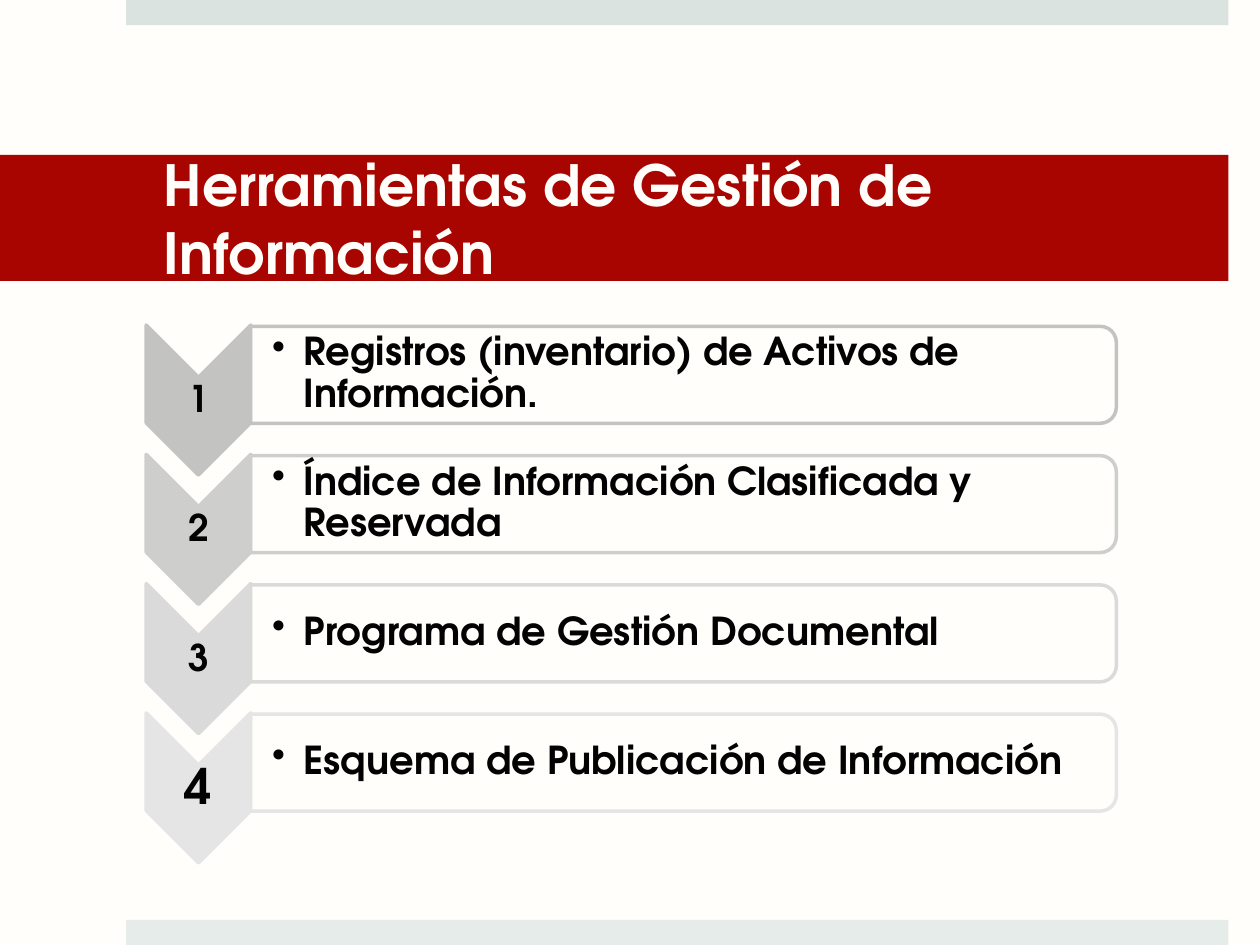
import dataclasses

import pptx
import pptx.dml.color
import pptx.enum.shapes
import pptx.enum.text
import pptx.oxml.ns
import pptx.util
from lxml import etree

RGBColor = pptx.dml.color.RGBColor
MSO_SHAPE = pptx.enum.shapes.MSO_SHAPE
PP_ALIGN = pptx.enum.text.PP_ALIGN

PAPER = RGBColor(0xFF, 0xFE, 0xFB)
INK = RGBColor(0x02, 0x02, 0x02)
RED = RGBColor(0xA9, 0x05, 0x00)
TOP_BAND = RGBColor(0xDA, 0xE3, 0xDF)
BOTTOM_BAND = RGBColor(0xE6, 0xEC, 0xEA)
FONT = "TeX Gyre Adventor"

SLIDE_WIDTH = pptx.util.Inches(10)
SLIDE_HEIGHT = pptx.util.Inches(7.5)
COLUMN = SLIDE_WIDTH / 100
ROW = SLIDE_HEIGHT / 75
STEP_PITCH = 10.26


@dataclasses.dataclass(frozen=True)
class Area:
    left: float
    top: float
    width: float
    height: float

    def down(self, rows: float) -> "Area":
        return dataclasses.replace(self, top=self.top + rows)

    def lengths(self) -> tuple[int, int, int, int]:
        return (round(self.left * COLUMN), round(self.top * ROW),
                round(self.width * COLUMN), round(self.height * ROW))


@dataclasses.dataclass(frozen=True)
class Step:
    number: str
    text: str
    color: RGBColor
    number_size: int = 21


TITLE = Area(0, 12.3, 97.5, 10)
CHEVRON = Area(9.8, 27.6, 11.9, 8.3)
NUMBER = Area(11.6, 30, 8.3, 3.6)
PANEL = Area(50.4, -4.6, 7.7, 68.7)
ITEM = Area(19.9, 26.2, 68.3, 7)

STEPS = [
    Step("1", "Registros (inventario) de Activos de Información.", RGBColor(0xC3, 0xC4, 0xC2)),
    Step("2", "Índice de Información Clasificada y Reservada", RGBColor(0xCE, 0xCF, 0xCD)),
    Step("3", "Programa de Gestión Documental", RGBColor(0xD9, 0xDA, 0xD9)),
    Step("4", "Esquema de Publicación de Información", RGBColor(0xE4, 0xE5, 0xE4), 28),
]


def place(shape, area: Area) -> None:
    shape.left, shape.top, shape.width, shape.height = area.lengths()


def add_filled(slide, kind, area: Area, fill: RGBColor, line: RGBColor | None = None,
               rotation: float = 0):
    shape = slide.shapes.add_shape(kind, *area.lengths())
    shape.shadow.inherit = False
    shape.rotation = rotation
    shape.fill.solid()
    shape.fill.fore_color.rgb = fill
    if line is None:
        shape.line.fill.background()
    else:
        shape.line.color.rgb = line
        shape.line.width = pptx.util.Pt(2)
    return shape


def set_transparency(shape, opacity: int) -> None:
    color = shape.fill._xPr.find(".//" + pptx.oxml.ns.qn("a:srgbClr"))
    etree.SubElement(color, pptx.oxml.ns.qn("a:alpha"), val=str(opacity * 1000))


def set_margins(frame, left: float, top: float, right: float, bottom: float) -> None:
    frame.margin_left, frame.margin_right = round(left * COLUMN), round(right * COLUMN)
    frame.margin_top, frame.margin_bottom = round(top * ROW), round(bottom * ROW)


def format_runs(paragraph, size: float, color: RGBColor) -> None:
    for run in paragraph.runs:
        run.font.name = FONT
        run.font.size = pptx.util.Pt(size)
        run.font.bold = True
        run.font.color.rgb = color


def add_text(slide, area: Area, text: str, size: float, alignment, left_margin: float):
    frame = slide.shapes.add_textbox(*area.lengths()).text_frame
    frame.word_wrap = True
    frame.vertical_anchor = pptx.enum.text.MSO_ANCHOR.MIDDLE
    set_margins(frame, left_margin, 0.2, 0.2, 0.2)
    frame.text = text
    paragraph = frame.paragraphs[0]
    paragraph.alignment = alignment
    paragraph.line_spacing = 0.9
    format_runs(paragraph, size, INK)
    return paragraph


def add_bullet(paragraph) -> None:
    properties = paragraph._p.get_or_add_pPr()
    indent = round(2.5 * COLUMN)
    properties.set("marL", str(indent))
    properties.set("indent", str(-indent))
    etree.SubElement(properties, pptx.oxml.ns.qn("a:buChar"), char="•")


def add_step(slide, step: Step, index: int) -> None:
    offset = index * STEP_PITCH
    add_filled(slide, MSO_SHAPE.CHEVRON, CHEVRON.down(offset), step.color, step.color, 90)
    add_text(slide, NUMBER.down(offset), step.number, step.number_size, PP_ALIGN.CENTER, 0.2)
    panel = add_filled(slide, MSO_SHAPE.ROUND_2_SAME_RECTANGLE, PANEL.down(offset),
                       PAPER, step.color, 90)
    set_transparency(panel, 90)
    add_bullet(add_text(slide, ITEM.down(offset), step.text, 22, PP_ALIGN.LEFT, 1.7))


def format_title(title, text: str) -> None:
    place(title, TITLE)
    title.fill.solid()
    title.fill.fore_color.rgb = RED
    frame = title.text_frame
    frame.text = text
    frame.word_wrap = True
    frame.auto_size = pptx.enum.text.MSO_AUTO_SIZE.NONE
    frame.vertical_anchor = pptx.enum.text.MSO_ANCHOR.MIDDLE
    set_margins(frame, 13, 0.5, 3, 0.5)
    frame.paragraphs[0].alignment = PP_ALIGN.LEFT
    format_runs(frame.paragraphs[0], 32.4, PAPER)


def main() -> None:
    presentation = pptx.Presentation()
    presentation.slide_width = SLIDE_WIDTH
    presentation.slide_height = SLIDE_HEIGHT
    slide = presentation.slides.add_slide(presentation.slide_layouts.get_by_name("Title Only"))
    slide.background.fill.solid()
    slide.background.fill.fore_color.rgb = PAPER

    add_filled(slide, MSO_SHAPE.RECTANGLE, Area(10, 0, 87.5, 2), TOP_BAND)
    add_filled(slide, MSO_SHAPE.RECTANGLE, Area(10, 73, 87.5, 2), BOTTOM_BAND)
    format_title(slide.shapes.title, "Herramientas de Gestión de Información")
    for index, step in enumerate(STEPS):
        add_step(slide, step, index)
    presentation.save("out.pptx")


if __name__ == "__main__":
    main()
